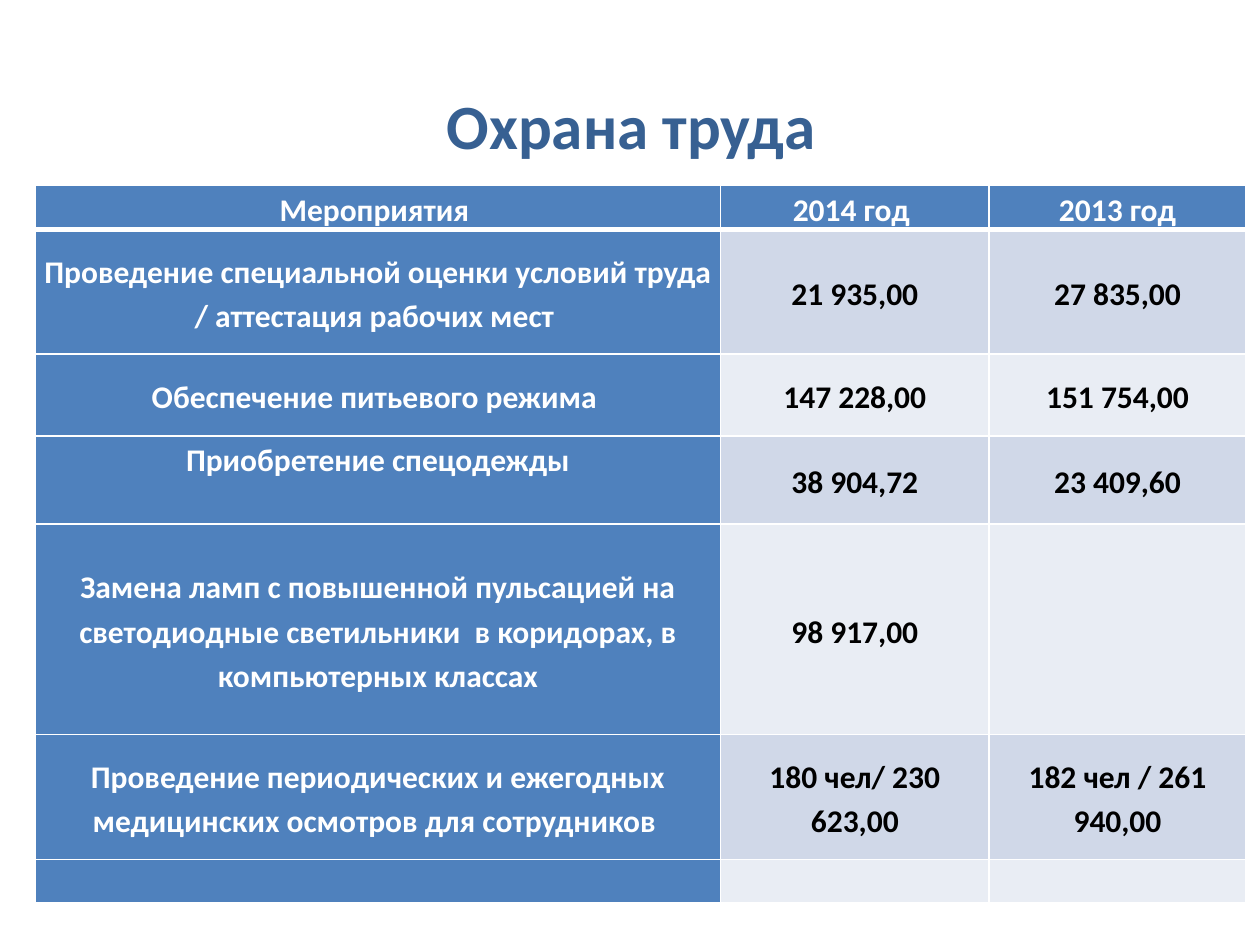
from lxml.etree import SubElement
from pptx import Presentation
from pptx.dml.color import RGBColor
from pptx.enum.text import MSO_ANCHOR, PP_ALIGN
from pptx.oxml.ns import qn
from pptx.util import Inches, Pt

FONT = "Calibri"
WHITE, BLACK = "FFFFFF", "000000"
TITLE_BLUE, HEADER_BLUE = "376092", "4F81BD"
BANDS = ("D0D8E8", "E9EDF4")

# Shares of the slide, in percent
COLUMN_WIDTHS = (54.4, 21.3, 20.4)
ROWS = [
    (4.6, ("Мероприятия ", "2014 год ", "2013 год")),
    (13.2, ("Проведение специальной оценки условий труда / аттестация рабочих мест ",
            "21 935,00", "27 835,00")),
    (8.67, ("Обеспечение питьевого режима ", "147 228,00", "151 754,00")),
    (9.33, ("Приобретение спецодежды", "38 904,72", "23 409,60")),
    (22.27, ("Замена ламп с повышенной пульсацией на светодиодные светильники  "
             "в коридорах, в компьютерных классах", "98 917,00", "")),
    (13.2, ("Проведение периодических и ежегодных медицинских осмотров для сотрудников ",
            "180 чел/ 230 623,00", "182 чел / 261 940,00")),
    (4.6, ("", "", "")),
]
CLOTHING_ROW = 3


def color(hex_code):
    return RGBColor.from_string(hex_code)


class SlideBuilder:
    def __init__(self, presentation):
        self.width = presentation.slide_width
        self.height = presentation.slide_height
        self.slide = presentation.slides.add_slide(presentation.slide_layouts[5])

    def across(self, percent):
        return round(self.width * percent / 100)

    def down(self, percent):
        return round(self.height * percent / 100)

    def add_text(self, paragraph, text, size, hex_code):
        paragraph.alignment = PP_ALIGN.CENTER
        run = paragraph.add_run()
        run.text = text
        run.font.name = FONT
        run.font.size = Pt(size)
        run.font.bold = True
        run.font.color.rgb = color(hex_code)

    def title(self, text, left, top, width, height):
        shape = self.slide.shapes.title
        shape.left, shape.top = self.across(left), self.down(top)
        shape.width, shape.height = self.across(width), self.down(height)
        shape.text_frame.vertical_anchor = MSO_ANCHOR.MIDDLE
        self.add_text(shape.text_frame.paragraphs[0], text, 36, TITLE_BLUE)

    def border(self, cell, side, points):
        properties = cell._tc.get_or_add_tcPr()
        line = SubElement(properties, qn(f"a:ln{side}"), w=str(Pt(points)))
        fill = SubElement(line, qn("a:solidFill"))
        SubElement(fill, qn("a:srgbClr"), val=WHITE)

    def cell(self, cell, text, fill, text_color, row_index):
        thick_side = {0: "B", 1: "T"}.get(row_index)
        for side in "LRTB":
            self.border(cell, side, 3 if side == thick_side else 1)
        cell.fill.solid()
        cell.fill.fore_color.rgb = color(fill)
        cell.margin_left = cell.margin_right = Inches(0.07)
        cell.margin_top = cell.margin_bottom = 0
        cell.vertical_anchor = MSO_ANCHOR.MIDDLE
        paragraph = cell.text_frame.paragraphs[0]
        paragraph.line_spacing = 1.15
        self.add_text(paragraph, text, 18, text_color)

    def table(self, rows, column_widths, left, top):
        frame = self.slide.shapes.add_table(
            len(rows), len(column_widths), self.across(left), self.down(top),
            self.across(sum(column_widths)), self.down(sum(share for share, _ in rows)))
        table = frame.table
        for column, share in zip(table.columns, column_widths):
            column.width = self.across(share)
        for row_index, (share, texts) in enumerate(rows):
            table.rows[row_index].height = self.down(share)
            for column_index, text in enumerate(texts):
                heading = row_index == 0 or column_index == 0
                fill = HEADER_BLUE if heading else BANDS[(row_index - 1) % 2]
                self.cell(table.cell(row_index, column_index), text, fill,
                          WHITE if heading else BLACK, row_index)
        return table


def main():
    presentation = Presentation()
    presentation.slide_width = Inches(10)
    presentation.slide_height = Inches(7.5)
    builder = SlideBuilder(presentation)
    builder.title("Охрана труда", 5.1, 4.8, 90, 16.67)
    table = builder.table(ROWS, COLUMN_WIDTHS, 2.8, 19.6)
    table.cell(CLOTHING_ROW, 0).vertical_anchor = MSO_ANCHOR.TOP
    presentation.save("out.pptx")


if __name__ == "__main__":
    main()
